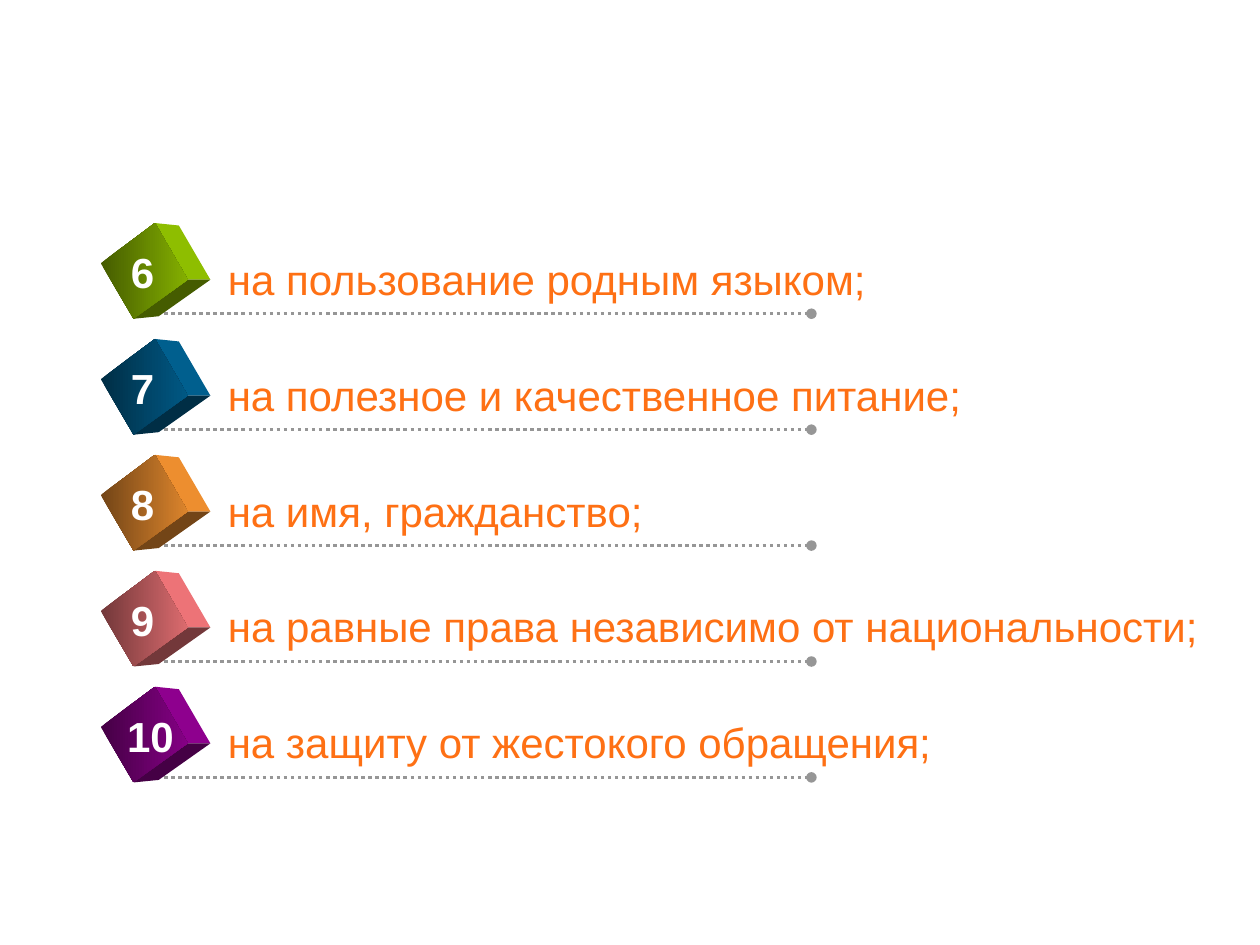
import colorsys
from dataclasses import dataclass

import pptx
import pptx.util
import pptx.dml.color
import pptx.enum.dml
import pptx.enum.shapes
import pptx.enum.text
import pptx.oxml
import pptx.oxml.ns

CELL = pptx.util.Inches(0.1)  # the slide is a grid of 100 columns by 75 rows


@dataclass(frozen=True)
class Theme:
    font: str = "Arial"
    size: int = 24
    text: str = "FE7014"
    digit: str = "FFFFFF"
    rule: str = "969696"
    weight: float = 2
    dark: float = 0.45
    mid: float = 0.86
    light: float = 0.93


THEME = Theme()
TOP, PITCH = 17.7, 9.2
LEFT, WIDTH, HEIGHT = 8, 56.4, 7.6

# number, left and width of number, wording, width of wording, cube colour
ITEMS = [
    ("6", 1.4, 3.9, "на пользование родным языком;", 53.1, "99CC00"),
    ("7", 1.4, 3.9, "на полезное и качественное питание;", 61.7, "006699"),
    ("8", 1.4, 3.9, "на имя, гражданство;", 35.3, "FF9933"),
    ("9", 1.4, 3.9, "на равные права независимо от национальности;", 79.8, "FF7C80"),
    ("10", 1.1, 5.8, "на защиту от жестокого обращения;", 59.3, "990099"),
]

# corners of the cube, in cells from the corner of its row
WEST, NORTH, MID, SOUTH = (0, 3.2), (4.3, 0), (6.9, 4.5), (2.6, 7.6)
CREST, EAST, FOOT = (6.2, 0.2), (8.7, 4.5), (4.6, 7.4)


def grid(cells):
    return round(cells * CELL)


def tone(code):
    return pptx.dml.color.RGBColor.from_string(code)


def shade(code, share):
    """Darken a colour to a share of its brightness."""
    hue, sat, val = colorsys.rgb_to_hsv(*(part / 255 for part in tone(code)))
    parts = colorsys.hsv_to_rgb(hue, sat, val * share)
    return pptx.dml.color.RGBColor(*(round(part * 255) for part in parts))


def draw_face(group, left, top, points):
    spots = [(grid(left + x), grid(top + y)) for x, y in points]
    pen = group.shapes.build_freeform(*spots[0])
    pen.add_line_segments(spots[1:], close=True)
    face = pen.convert_to_shape()
    face.shadow.inherit = False
    face.line.fill.background()
    return face


def draw_cube(group, left, top, code):
    sides = [
        ((NORTH, CREST, EAST, MID), THEME.light),
        ((SOUTH, MID, EAST, FOOT), THEME.dark),
    ]
    for points, share in sides:
        side = draw_face(group, left, top, points)
        side.fill.solid()
        side.fill.fore_color.rgb = shade(code, share)
    front = draw_face(group, left, top, (WEST, NORTH, MID, SOUTH))
    front.fill.gradient()
    front.fill.gradient_angle = 0
    stops = front.fill.gradient_stops
    for stop, place, share in zip(stops, (0, 1), (THEME.dark, THEME.mid)):
        stop.position = place
        stop.color.rgb = shade(code, share)


def draw_rule(group, start, end, level):
    rule = group.shapes.add_connector(
        pptx.enum.shapes.MSO_CONNECTOR.STRAIGHT,
        grid(start), grid(level), grid(end), grid(level))
    rule.line.color.rgb = tone(THEME.rule)
    rule.line.width = pptx.util.Pt(THEME.weight)
    rule.line.dash_style = pptx.enum.dml.MSO_LINE.ROUND_DOT
    space = pptx.oxml.ns.nsdecls("a")
    props = rule._element.spPr
    props.find(pptx.oxml.ns.qn("a:ln")).append(
        pptx.oxml.parse_xml(f'<a:tailEnd {space} type="oval"/>'))
    props.append(pptx.oxml.parse_xml(f"<a:effectLst {space}/>"))


def add_label(group, left, top, width, words, code, bold=False):
    box = group.shapes.add_textbox(grid(left), grid(top), grid(width), grid(5.1))
    frame = box.text_frame
    frame.word_wrap = False
    frame.auto_size = pptx.enum.text.MSO_AUTO_SIZE.SHAPE_TO_FIT_TEXT
    run = frame.paragraphs[0].add_run()
    run.text = words
    run.font.name = THEME.font
    run.font.size = pptx.util.Pt(THEME.size)
    run.font.bold = bold
    run.font.color.rgb = tone(code)


def draw_item(slide, box, item):
    """Place one numbered right in a box of left, top, width and height."""
    left, top, width, height = box
    number, shift, span, words, length, code = item
    group = slide.shapes.add_group_shape()
    draw_rule(group, left + 3.9, left + width, top + height - 0.4)
    draw_cube(group, left, top, code)
    add_label(group, left + 9.1, top + 1.9, length, words, THEME.text)
    add_label(group, left + shift, top + 1.4, span, number, THEME.digit, True)


def main():
    deck = pptx.Presentation()
    deck.slide_width, deck.slide_height = grid(100), grid(75)
    slide = deck.slides.add_slide(deck.slide_layouts[6])
    for row, item in enumerate(ITEMS):
        draw_item(slide, (LEFT, TOP + row * PITCH, WIDTH, HEIGHT), item)
    deck.save("out.pptx")


if __name__ == "__main__":
    main()
